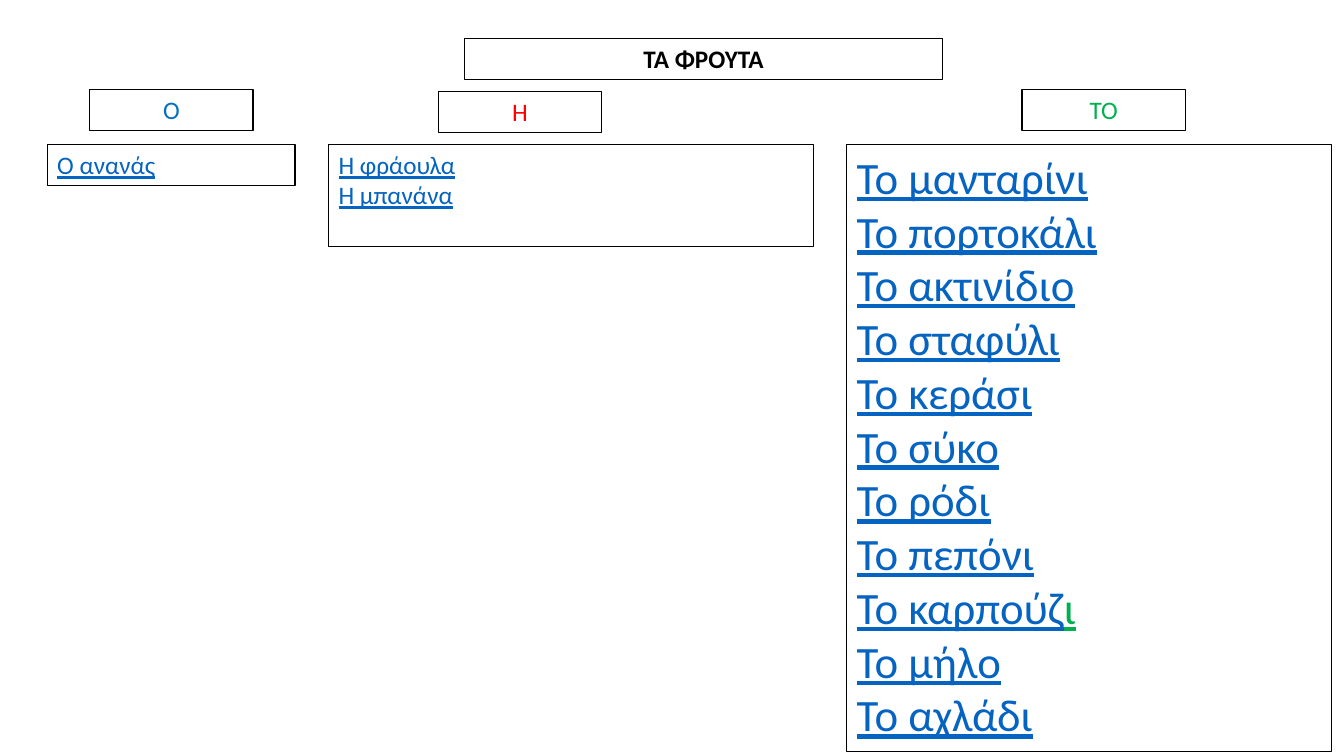
from pptx import Presentation
from pptx.dml.color import RGBColor
from pptx.enum.shapes import MSO_SHAPE as Shape
from pptx.enum.text import MSO_ANCHOR as Anchor, MSO_AUTO_SIZE as AutoSize, PP_ALIGN as Align
from pptx.util import Pt

BLACK, WHITE, LINK = "000000", "FFFFFF", "0563C1"
BLUE, RED, GREEN = "0070C0", "FF0000", "00B050"
LABEL_WIDTH, LABEL_HEIGHT = 116.6, 29.1
LIST_TOP = 103.2

# Each word is a list of (text, colour) spans
MASCULINE = [[("Ο ανανάς", LINK)]]
FEMININE = [[("Η φράουλα", LINK)], [("Η μπανάνα", LINK)]]
NEUTER = [
    [("Το μανταρίνι", LINK)],
    [("Το πορτοκάλι", LINK)],
    [("Το ακτινίδιο", LINK)],
    [("Το σταφύλι", LINK)],
    [("Το κεράσι", LINK)],
    [("Το σύκο", LINK)],
    [("Το ρόδι", LINK)],
    [("Το πεπόνι", LINK)],
    [("Το καρπούζ", LINK), ("ι", GREEN)],
    [("Το μήλο", LINK)],
    [("Το αχλάδι", LINK)],
]


def color(hex_string):
    return RGBColor.from_string(hex_string)


def add_span(para, text, size=18, fill=BLACK, bold=False, underline=False):
    span = para.add_run()
    span.text = text
    font = span.font
    font.name, font.size = "Calibri", Pt(size)
    font.bold, font.underline = bold, underline
    font.color.rgb = color(fill)


def add_frame(page, left, top, width, height, line_width=1, fill=WHITE):
    """Draw an outlined box and return its text frame."""
    box = page.shapes.add_shape(Shape.RECTANGLE, Pt(left), Pt(top), Pt(width), Pt(height))
    box.shadow.inherit = False
    if fill:
        box.fill.solid()
        box.fill.fore_color.rgb = color(fill)
    else:
        box.fill.background()
    box.line.color.rgb = color(BLACK)
    box.line.width = Pt(line_width)
    frame = box.text_frame
    frame.word_wrap = True
    frame.auto_size = AutoSize.NONE
    frame.vertical_anchor = Anchor.TOP
    return frame


def add_title(page, left, top, width, height):
    para = add_frame(page, left, top, width, height, line_width=0.75, fill=None).paragraphs[0]
    para.alignment = Align.CENTER
    add_span(para, "ΤΑ ΦΡΟΥΤΑ", bold=True)


def add_article(page, left, top, article, fill):
    para = add_frame(page, left, top, LABEL_WIDTH, LABEL_HEIGHT).paragraphs[0]
    para.alignment = Align.CENTER
    add_span(para, article, fill=fill)


def add_words(page, left, width, height, words, size=18):
    frame = add_frame(page, left, LIST_TOP, width, height)
    for index, word in enumerate(words):
        para = frame.add_paragraph() if index else frame.paragraphs[0]
        para.alignment = Align.LEFT
        for text, fill in word:
            add_span(para, text, size=size, fill=fill, underline=True)


def main():
    deck = Presentation()
    deck.slide_width, deck.slide_height = Pt(960), Pt(540)
    page = deck.slides.add_slide(deck.slide_layouts[6])

    # Fruit lists by gender
    add_words(page, 33.8, 177.1, 29.1, MASCULINE)
    add_words(page, 234.7, 346.3, 72.7, FEMININE)
    add_words(page, 604.8, 346.3, 433.4, NEUTER, size=32)

    # Title and articles
    add_title(page, 331.9, 27.4, 341.3, 29.1)
    add_article(page, 64.1, 64.1, "Ο", BLUE)
    add_article(page, 730.1, 64.1, "ΤΟ", GREEN)
    add_article(page, 313.2, 65.5, "Η", RED)

    deck.save("out.pptx")


if __name__ == "__main__":
    main()
